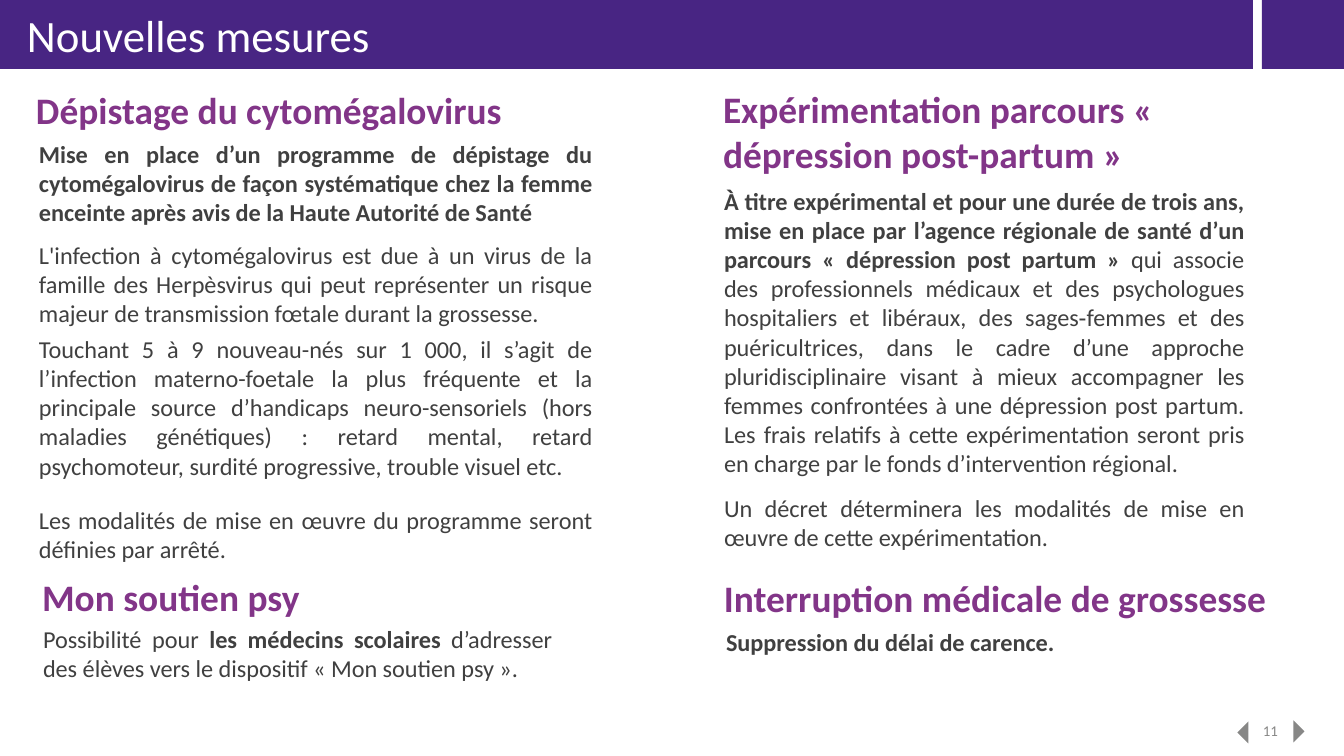
from pptx import Presentation
from pptx.dml.color import RGBColor
from pptx.enum.shapes import MSO_SHAPE as SHAPE
from pptx.enum.text import MSO_ANCHOR as ANCHOR, MSO_AUTO_SIZE as AUTO, PP_ALIGN as ALIGN
from pptx.util import Emu, Pt

W, H = 1344, 756
SCALE = 9144000 / W
FONT = "Calibri"
PURPLE, VIOLET, GREY, DARK, WHITE = "482583", "823588", "878786", "404040", "FFFFFF"

# Content: a paragraph is (space before in pt, [(text, bold), ...])
TITLE = "Nouvelles mesures"
PAGE = "11"

HEADINGS = [  # text, box
    ("Dépistage du cytomégalovirus", (36, 87, 524, 38)),
    ("Expérimentation parcours « dépression post-partum »", (723, 86, 500, 38)),
    ("Mon soutien psy", (42, 574, 524, 38)),
    ("Interruption médicale de grossesse", (724, 575, 563, 43)),
]

BODIES = [  # box, alignment, paragraphs
    ((26, 132, 579, 454), ALIGN.JUSTIFY, [
        (0, [("Mise en place d’un programme de dépistage du cytomégalovirus de façon "
              "systématique chez la femme enceinte après avis de la Haute Autorité de Santé", True)]),
        (7.3, [("L'infection à cytomégalovirus est due à un virus de la famille des Herpèsvirus "
                "qui peut représenter un risque majeur de transmission fœtale durant la "
                "grossesse.", False)]),
        (3.6, [("Touchant 5 à 9 nouveau-nés sur 1 000, il s’agit de l’infection "
                "materno-foetale la plus fréquente et la principale source d’handicaps "
                "neuro-sensoriels (hors maladies génétiques) : retard mental, retard "
                "psychomoteur, surdité progressive, trouble visuel etc.", False)]),
        (13.4, [("Les modalités de mise en œuvre du programme seront définies par arrêté.", False)]),
    ]),
    ((711, 179, 546, 382), ALIGN.JUSTIFY, [
        (0, [("À titre expérimental et pour une durée de trois ans, mise en place par l’agence "
              "régionale de santé d’un parcours « dépression post partum » ", True),
             ("qui associe des professionnels médicaux et des psychologues hospitaliers et "
              "libéraux, des sages‑femmes et des puéricultrices, dans le cadre d’une approche "
              "pluridisciplinaire visant à mieux accompagner les femmes confrontées à une "
              "dépression post partum. Les frais relatifs à cette expérimentation seront pris "
              "en charge par le fonds d’intervention régional.", False)]),
        (8.5, [("Un décret déterminera les modalités de mise en œuvre de cette "
                "expérimentation.", False)]),
    ]),
    ((30, 617, 535, 73), ALIGN.JUSTIFY, [
        (0, [("Possibilité pour ", False), ("les médecins scolaires ", True),
             ("d’adresser des élèves vers le dispositif « Mon soutien psy ».", False)]),
    ]),
    ((713, 620, 535, 43), ALIGN.LEFT, [
        (0, [("Suppression du délai de carence.", True)]),
    ]),
]

BARS = [(0, 0, 1253, 69), (1262, 0, 82, 69)]
ARROWS = [((1232, 727, 22, 11), 270), ((1288, 726, 22, 11), 90)]


def px(n):
    return Emu(round(n * SCALE))


def rgb(color):
    return RGBColor.from_string(color)


def place(s, box):
    s.left, s.top, s.width, s.height = map(px, box)


def write(s, paras, size, color, align=ALIGN.LEFT, anchor=ANCHOR.TOP, inset=(0, 0)):
    """Fill a shape with text; a plain string is one regular paragraph."""
    if isinstance(paras, str):
        paras = [(0, [(paras, False)])]
    tf = s.text_frame
    tf.word_wrap, tf.auto_size, tf.vertical_anchor = True, AUTO.NONE, anchor
    tf.margin_left = tf.margin_right = px(inset[0])
    tf.margin_top = tf.margin_bottom = px(inset[1])
    for i, (gap, runs) in enumerate(paras):
        p = tf.add_paragraph() if i else tf.paragraphs[0]
        p.alignment, p.space_before = align, Pt(gap)
        for text, bold in runs:
            r = p.add_run()
            r.text = text
            r.font.name, r.font.size, r.font.bold = FONT, Pt(size), bold
            r.font.color.rgb = rgb(color)


def add_text(box, paras, **fmt):
    write(slide.shapes.add_textbox(*map(px, box)), paras, **fmt)


def add_shape(kind, box, color, rotation=0):
    s = slide.shapes.add_shape(kind, *map(px, box))
    s.shadow.inherit = False
    s.fill.solid()
    s.fill.fore_color.rgb = rgb(color)
    s.line.fill.background()
    s.rotation = rotation
    return s


prs = Presentation()
prs.slide_width, prs.slide_height = px(W), px(H)
slide = prs.slides.add_slide(prs.slide_layouts[5])

# Banner, kept behind the title
title = slide.shapes.title
for box in BARS:
    bar = add_shape(SHAPE.RECTANGLE, box, PURPLE)
    title._element.addprevious(bar._element)
place(title, (27, 8, 1219, 54))
write(title, TITLE, 24, WHITE, anchor=ANCHOR.MIDDLE)

# Page number between the arrows
add_text((1241, 700, 59, 40), PAGE, size=8, color=GREY, align=ALIGN.CENTER, anchor=ANCHOR.BOTTOM)
for box, rotation in ARROWS:
    add_shape(SHAPE.ISOSCELES_TRIANGLE, box, GREY, rotation)

# Headings and their texts
for text, box in HEADINGS:
    add_text(box, [(0, [(text, True)])], size=20, color=VIOLET)
for box, align, paras in BODIES:
    add_text(box, paras, size=13, color=DARK, align=align, inset=(13, 7))

prs.save("out.pptx")
